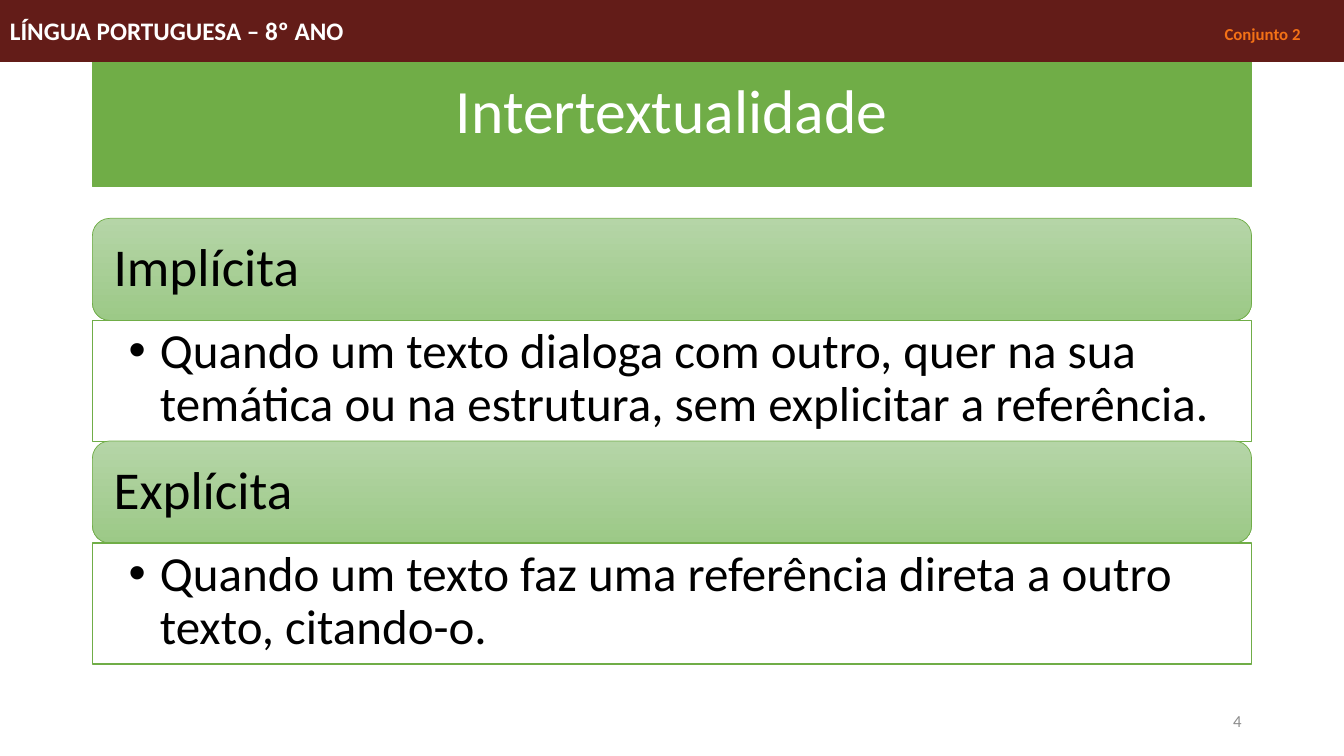
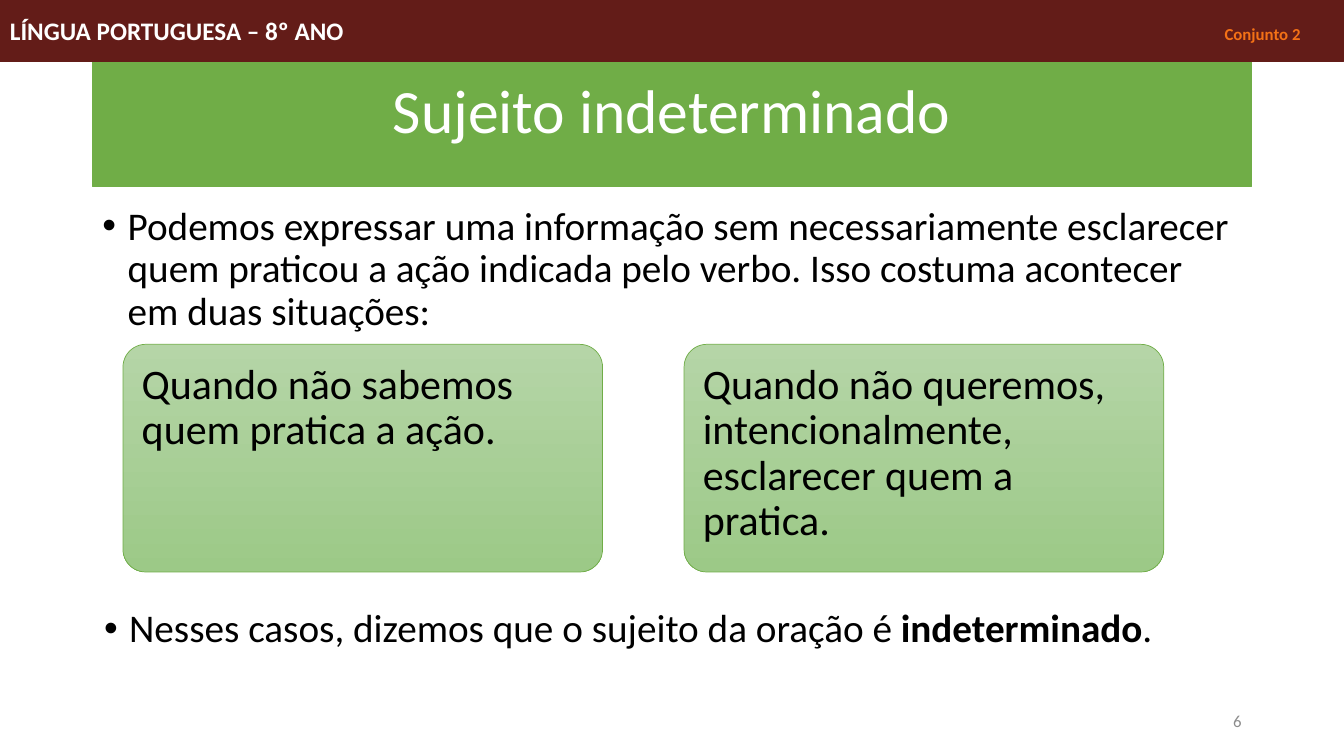
from lxml.etree import SubElement as Sub
from pptx import Presentation
from pptx.dml.color import RGBColor as Rgb
from pptx.enum.shapes import MSO_SHAPE as Kind
from pptx.enum.text import MSO_ANCHOR as Anchor, MSO_AUTO_SIZE as Auto, PP_ALIGN as Align
from pptx.oxml.ns import qn
from pptx.util import Inches, Pt

HUES = {
    "band": "631C18", "green": "70AD47", "top": "B5D5A7", "base": "9CC987",
    "white": "FFFFFF", "black": "000000", "gray": "8C8C8C", "orange": "F47116",
}
FACE = "Calibri"
COLS, ROWS = 160, 90
LEFT, WIDE = 11, 138


def hue(name):
    return Rgb.from_string(HUES[name])


class Deck:
    def __init__(self):
        self.file = Presentation()
        self.file.slide_width, self.file.slide_height = Inches(13.333), Inches(7.5)
        self.page = None

    def grid(self, col, row, wide, high):
        x, y = self.file.slide_width / COLS, self.file.slide_height / ROWS
        return [int(n) for n in (col * x, row * y, wide * x, high * y)]

    def start(self, title, layout):
        self.page = self.file.slides.add_slide(self.file.slide_layouts[layout])
        head = self.page.shapes.title
        self.place(head, (LEFT, 4.8, WIDE, 17.4))
        self.paint(head, "green", "green")
        self.say(head, [title], 44, "white", align=Align.CENTER, anchor=Anchor.MIDDLE)

    def place(self, shape, area):
        shape.left, shape.top, shape.width, shape.height = self.grid(*area)

    def paint(self, shape, fill, edge, width=1):
        if fill == "fade":
            shape.fill.gradient()
            shape.fill.gradient_angle = 270
            for stop, name in zip(shape.fill.gradient_stops, ("top", "base")):
                stop.color.rgb = hue(name)
        else:
            shape.fill.solid()
            shape.fill.fore_color.rgb = hue(fill)
        shape.line.color.rgb = hue(edge)
        shape.line.width = Pt(width)

    def say(self, shape, parts, size, color="black", align=Align.LEFT,
            anchor=Anchor.TOP, inset=(0.1, 0.05), indent=0, lead=0.9, before=0):
        frame = shape.text_frame
        frame.word_wrap, frame.auto_size = True, Auto.NONE
        frame.vertical_anchor = anchor
        frame.margin_left = frame.margin_right = Inches(inset[0])
        frame.margin_top = frame.margin_bottom = Inches(inset[1])
        para = frame.paragraphs[0]
        para.alignment, para.line_spacing = align, lead
        para.space_before = Pt(before)
        if indent:
            prop = para._p.get_or_add_pPr()
            prop.set("marL", str(Inches(indent)))
            prop.set("indent", str(-Inches(indent)))
            Sub(prop, qn("a:buFont")).set("typeface", "Arial")
            Sub(prop, qn("a:buChar")).set("char", "•")
        font = para.font
        font.name, font.size, font.color.rgb = FACE, Pt(size), hue(color)
        for text in parts:
            para.add_run().text = text
        return para

    def shape(self, kind, area, fill, edge, width=1):
        item = self.page.shapes.add_shape(kind, *self.grid(*area))
        item.shadow.inherit = False
        self.paint(item, fill, edge, width)
        return item

    def card(self, area, text, size, inset, anchor=Anchor.TOP, curve=0.1):
        item = self.shape(Kind.ROUNDED_RECTANGLE, area, "fade", "green", 0.5)
        item.adjustments[0] = curve
        self.say(item, [text], size, anchor=anchor, inset=(inset, inset))

    def panel(self, row, label, text):
        high = 12.15
        self.card((LEFT, row, WIDE, high), label, 38, 0.16, Anchor.MIDDLE, 0.17)
        box = self.shape(Kind.RECTANGLE, (LEFT, row + high, WIDE, 14.4), "white", "green")
        self.say(box, [text], 35, inset=(0.36, 0.06), indent=0.31)

    def body(self, area, text):
        item = self.page.placeholders[1]
        self.place(item, area)
        self.say(item, [text], 28, indent=0.25, before=10)

    def label(self, area, parts, size, **style):
        item = self.page.shapes.add_textbox(*self.grid(*area))
        return self.say(item, parts, size, **style)

    def close(self, number):
        self.label((113, 83.4, 36, 4.8), [number], 12, color="gray",
                   align=Align.RIGHT, anchor=Anchor.MIDDLE, lead=1)
        band = self.shape(Kind.RECTANGLE, (0, 0, COLS, 7.3), "band", "band", 0.75)
        para = self.say(band, ["LÍNGUA PORTUGUESA – 8º ANO\t", "Conjunto 2"], 18,
                        "white", anchor=Anchor.MIDDLE, lead=1)
        para.font.bold = True
        unit = para.runs[1].font
        unit.size, unit.color.rgb = Pt(12), hue("orange")
        tabs = Sub(para._p.get_or_add_pPr(), qn("a:tabLst"))
        para._p.pPr.find(qn("a:defRPr")).addprevious(tabs)
        stop = Sub(tabs, qn("a:tab"))
        stop.set("pos", str(Inches(12.05)))
        stop.set("algn", "l")


def main():
    deck = Deck()

    deck.start("Intertextualidade", 5)
    panels = [
        ("Implícita", "Quando um texto dialoga com outro, quer na sua temática ou na "
                      "estrutura, sem explicitar a referência."),
        ("Explícita", "Quando um texto faz uma referência direta a outro texto, citando-o."),
    ]
    for i, (label, text) in enumerate(panels):
        deck.panel(26 + 26.5 * i, label, text)
    deck.close("4")

    deck.start("Sujeito indeterminado", 1)
    deck.body((LEFT, 24, WIDE, 17),
              "Podemos expressar uma informação sem necessariamente esclarecer quem "
              "praticou a ação indicada pelo verbo. Isso costuma acontecer em duas situações:")
    cards = [
        "Quando não sabemos quem pratica a ação.",
        "Quando não queremos, intencionalmente, esclarecer quem a pratica.",
    ]
    for i, text in enumerate(cards):
        deck.card((14.64 + 66.8 * i, 41, 57.1, 27.1), text, 30, 0.12)
    note = deck.label((11.2, 71.9, WIDE, 6.6),
                      ["Nesses casos, dizemos que o sujeito da oração é ", "indeterminado", "."],
                      28, indent=0.25, before=10)
    note.runs[1].font.bold = True
    deck.close("6")

    deck.file.save("out.pptx")


if __name__ == "__main__":
    main()
